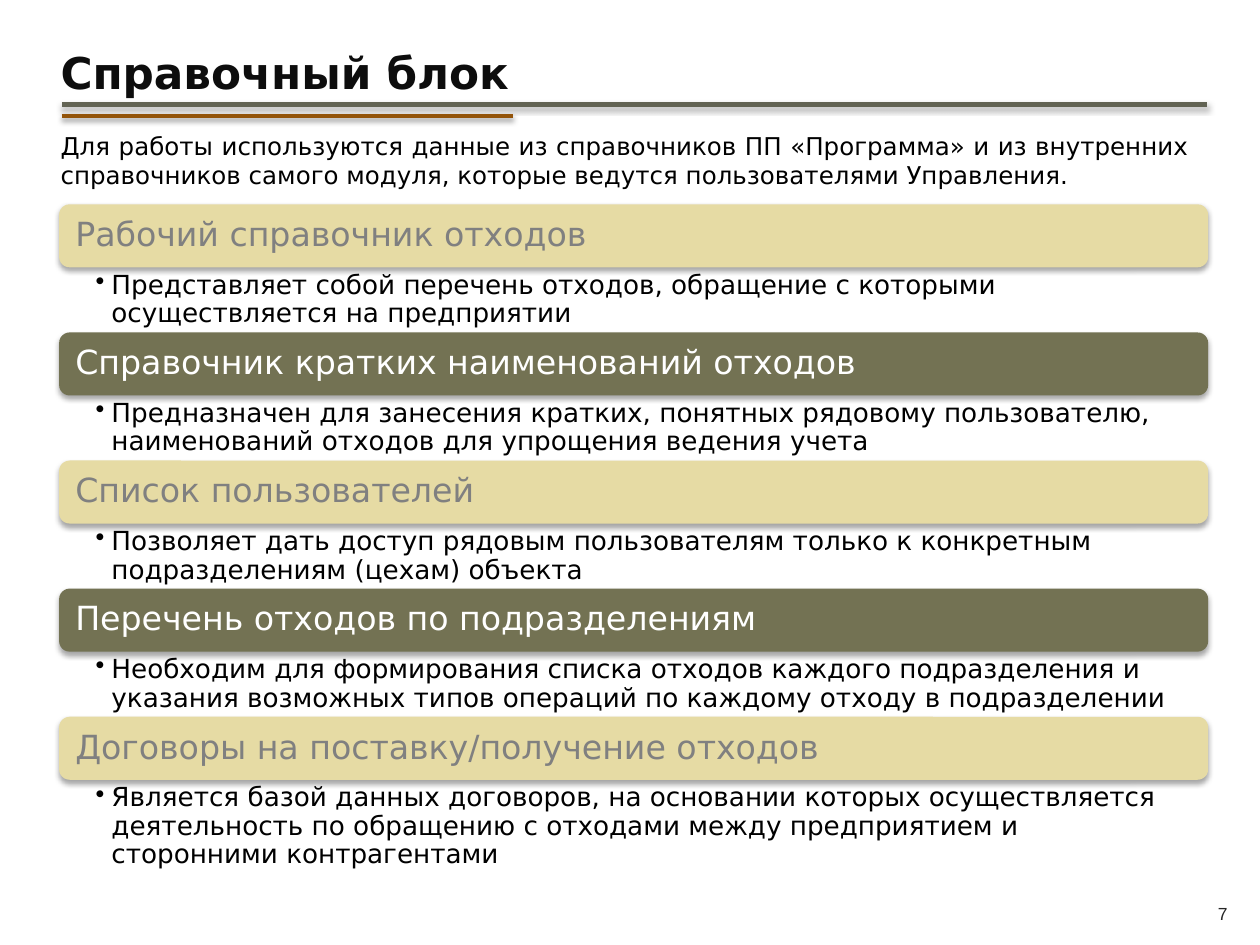
from dataclasses import dataclass

from lxml import etree
from pptx import Presentation
from pptx.dml.color import RGBColor
from pptx.enum import shapes, text
from pptx.oxml import ns
from pptx.util import Pt


@dataclass(frozen=True)
class Theme:
    font: str = "DejaVu Sans"
    number_font: str = "Arial"
    title: str = "0D0D0D"
    body: str = "000000"
    number: str = "262626"
    green_rule: str = "626353"
    brown_rule: str = "93540A"
    bars: tuple = (("E6DBA4", "808080"), ("737253", "FFFFFF"))
    title_size: float = 25
    intro_size: float = 14
    bar_size: float = 19
    detail_size: float = 15
    number_size: float = 10


THEME = Theme()

SECTIONS = [
    ("Рабочий справочник отходов",
     "Представляет собой перечень отходов, обращение с которыми осуществляется на предприятии"),
    ("Справочник кратких наименований отходов",
     "Предназначен для занесения кратких, понятных рядовому пользователю, "
     "наименований отходов для упрощения ведения учета"),
    ("Список пользователей",
     "Позволяет дать доступ рядовым пользователям только к конкретным подразделениям (цехам) объекта"),
    ("Перечень отходов по подразделениям",
     "Необходим для формирования списка отходов каждого подразделения и указания "
     "возможных типов операций по каждому отходу в подразделении"),
    ("Договоры на поставку/получение отходов",
     "Является базой данных договоров, на основании которых осуществляется деятельность "
     "по обращению с отходами между предприятием и сторонними контрагентами"),
]


def assign(target, values):
    for name, value in values.items():
        setattr(target, name, value)


def place(shape, left, top, width, height):
    assign(shape, {"left": Pt(left), "top": Pt(top), "width": Pt(width), "height": Pt(height)})


def shadow_effect(blur, distance, angle, opacity):
    effects = etree.Element(ns.qn("a:effectLst"))
    shadow = etree.SubElement(effects, ns.qn("a:outerShdw"), {
        "blurRad": str(Pt(blur)), "dist": str(Pt(distance)),
        "dir": str(angle * 60000), "rotWithShape": "0"})
    color = etree.SubElement(shadow, ns.qn("a:srgbClr"), val="000000")
    etree.SubElement(color, ns.qn("a:alpha"), val=str(opacity * 1000))
    return effects


def write(shape, words, size, color, font=THEME.font, bold=False, align=text.PP_ALIGN.LEFT,
          anchor=text.MSO_ANCHOR.TOP, insets=(7.2, 3.6, 7.2, 3.6), spacing=1.0):
    frame = shape.text_frame
    left, top, right, bottom = map(Pt, insets)
    assign(frame, {"word_wrap": True, "auto_size": text.MSO_AUTO_SIZE.NONE,
                   "vertical_anchor": anchor, "margin_left": left, "margin_top": top,
                   "margin_right": right, "margin_bottom": bottom})
    para = frame.paragraphs[0]
    assign(para, {"alignment": align, "line_spacing": spacing,
                  "space_before": Pt(0), "space_after": Pt(0)})
    span = para.add_run()
    span.text = words
    assign(span.font, {"name": font, "size": Pt(size), "bold": bold})
    span.font.color.rgb = RGBColor.from_string(color)
    return para


def set_bullet(para, indent, symbol=None):
    properties = para._p.get_or_add_pPr()
    properties.set("marL", str(Pt(indent)))
    properties.set("indent", str(-Pt(indent)))
    if symbol:
        etree.SubElement(properties, ns.qn("a:buChar"), char=symbol)
    else:
        etree.SubElement(properties, ns.qn("a:buNone"))


def add_rule(page, left, top, width, color, weight):
    rule = page.shapes.add_connector(
        shapes.MSO_CONNECTOR.STRAIGHT, Pt(left), Pt(top), Pt(left + width), Pt(top))
    rule.line.color.rgb = RGBColor.from_string(color)
    rule.line.width = Pt(weight)
    rule._element.spPr.append(shadow_effect(3.1, 1.8, 90, 35))


def build_heading(page, left, top, width):
    title = page.shapes.title
    place(title, left, top, width, 37.4)
    para = write(title, "Справочный блок", THEME.title_size, THEME.title, bold=True)
    fill = para.runs[0]._r.rPr.find(ns.qn("a:solidFill"))
    fill.addnext(shadow_effect(4, 3, 45, 45))
    add_rule(page, left + 7.9, top + 37.4, 654.5, THEME.green_rule, 3)
    add_rule(page, left + 7.9, top + 44, 257.8, THEME.brown_rule, 2.5)


def build_intro(page, left, top, width, height):
    intro = page.placeholders[1]
    place(intro, left, top, width, height)
    para = write(intro, "Для работы используются данные из справочников ПП «Программа» и из внутренних "
                 "справочников самого модуля, которые ведутся пользователями Управления.",
                 THEME.intro_size, THEME.body, align=text.PP_ALIGN.JUSTIFY)
    set_bullet(para, 0)


def build_section(page, left, top, width, heading, detail, colors):
    fill, ink = colors
    bar_height, detail_height = 36, 37.2
    bar = page.shapes.add_shape(shapes.MSO_SHAPE.ROUNDED_RECTANGLE,
                                Pt(left), Pt(top), Pt(width), Pt(bar_height))
    bar.fill.solid()
    bar.fill.fore_color.rgb = RGBColor.from_string(fill)
    bar.line.fill.background()
    bar._element.spPr.append(shadow_effect(3.1, 1.8, 90, 35))
    write(bar, heading, THEME.bar_size, ink, anchor=text.MSO_ANCHOR.MIDDLE,
          insets=(7.5, 5, 7.5, 5), spacing=0.9)
    box = page.shapes.add_textbox(Pt(left), Pt(top + bar_height + 0.5), Pt(width), Pt(detail_height))
    para = write(box, detail, THEME.detail_size, THEME.body, insets=(20.9, 2, 10.8, 2), spacing=0.9)
    para.level = 1
    set_bullet(para, 9, "•")


def build_sections(page, left, top, width, pitch):
    for index, (heading, detail) in enumerate(SECTIONS):
        build_section(page, left, top + index * pitch, width, heading, detail,
                      THEME.bars[index % len(THEME.bars)])


def build_page_number(page, left, top, width, height):
    box = page.shapes.add_textbox(Pt(left), Pt(top), Pt(width), Pt(height))
    write(box, "7", THEME.number_size, THEME.number, font=THEME.number_font,
          align=text.PP_ALIGN.CENTER, anchor=text.MSO_ANCHOR.MIDDLE)


def main():
    deck = Presentation()
    assign(deck, {"slide_width": Pt(720), "slide_height": Pt(540)})
    page = deck.slides.add_slide(deck.slide_layouts[1])
    build_heading(page, 27.4, 22.3, 668.2)
    build_intro(page, 27.4, 71.3, 659.5, 41)
    build_sections(page, 33.8, 116.8, 656.6, 73.2)
    build_page_number(page, 680.4, 507.6, 36.7, 28.8)
    deck.save("out.pptx")


if __name__ == "__main__":
    main()
